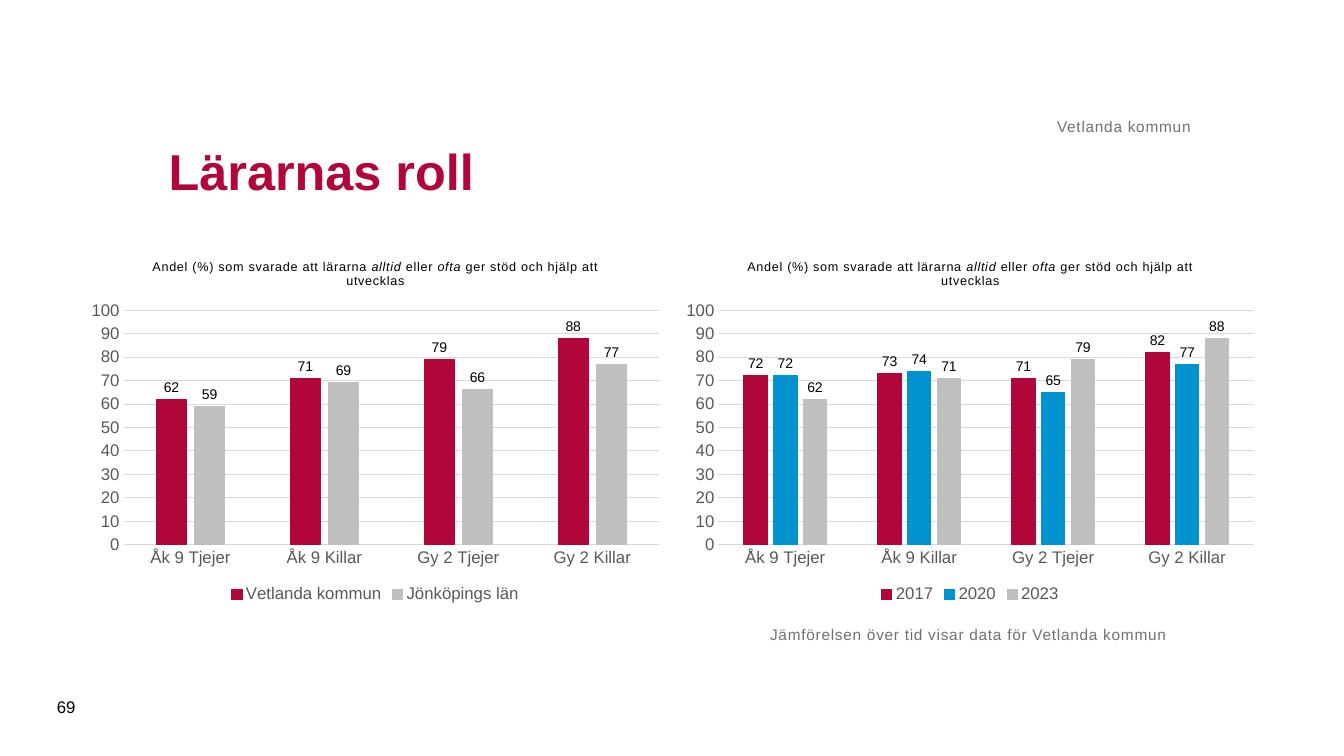
from pptx import Presentation
from pptx.chart.data import CategoryChartData
from pptx.dml.color import RGBColor
from pptx.enum.chart import (XL_CHART_TYPE as ChartType, XL_LABEL_POSITION as LabelPosition,
                             XL_LEGEND_POSITION as LegendPosition, XL_TICK_MARK as TickMark)
from pptx.enum.text import MSO_ANCHOR as Anchor, PP_ALIGN as Align
from pptx.util import Inches, Pt

WIDTH, HEIGHT = Inches(13.33), Inches(7.5)
FONT = "Arial"
NUMBER_FORMAT = "#,##0;#,##0"
COLORS = {"red": "B1063A", "blue": "0093D0", "silver": "BFBFBF", "grid": "D9D9D9",
          "axis": "595959", "note": "717171", "black": "000000"}
GROUPS = ["Åk 9 Tjejer", "Åk 9 Killar", "Gy 2 Tjejer", "Gy 2 Killar"]
QUESTION = [("Andel (%) som svarade att lärarna ", False), ("alltid", True), (" eller ", False),
            ("ofta", True), (" ger stöd och hjälp att utvecklas", False)]
REGION_SERIES = [("Vetlanda kommun", [62, 71, 79, 88], "red"),
                 ("Jönköpings län", [59, 69, 66, 77], "silver")]
YEAR_SERIES = [("2017", [72, 73, 71, 82], "red"), ("2020", [72, 74, 65, 77], "blue"),
               ("2023", [62, 71, 79, 88], "silver")]
CHART_LEFT, CHART_STEP, CHART_TOP = 0.0593, 0.4426, 0.32
CHART_WIDTH, CHART_HEIGHT = 0.44, 0.483


def rgb(name):
    """Return the named palette colour."""
    return RGBColor.from_string(COLORS[name])


def place(left, top, width, height):
    """Turn shares of the slide into a position and size."""
    return (round(left * WIDTH), round(top * HEIGHT), round(width * WIDTH), round(height * HEIGHT))


def style(font, size, color, bold=False, italic=False):
    """Set the typeface, size, colour and emphasis of a font."""
    font.name, font.size, font.bold, font.italic = FONT, Pt(size), bold, italic
    font.color.rgb = rgb(color)


def space_letters(run, points):
    """Widen the letter spacing of a run."""
    run.font._element.set("spc", str(round(points * 100)))


def add_title(slide, text):
    """Fill and format the title placeholder."""
    title = slide.shapes.title
    title.left, title.top, title.width, title.height = place(0.118, 0.131, 0.768, 0.189)
    frame = title.text_frame
    frame.text = text
    frame.vertical_anchor = Anchor.MIDDLE
    frame.paragraphs[0].alignment = Align.LEFT
    style(frame.paragraphs[0].runs[0].font, 36, "red", bold=True)


def add_label(slide, text, area, size, color, anchor=Anchor.TOP, align=Align.LEFT,
              inset=0, spacing=0):
    """Add one line of text."""
    frame = slide.shapes.add_textbox(*place(*area)).text_frame
    frame.word_wrap = True
    frame.vertical_anchor = anchor
    frame.margin_left = frame.margin_right = Inches(inset)
    frame.margin_top = frame.margin_bottom = Inches(inset / 2)
    frame.text = text
    line = frame.paragraphs[0]
    line.alignment = align
    style(line.runs[0].font, size, color)
    space_letters(line.runs[0], spacing)


def format_axes(chart):
    """Format both axes and the gridlines."""
    for axis in (chart.category_axis, chart.value_axis):
        axis.major_tick_mark = axis.minor_tick_mark = TickMark.NONE
        style(axis.tick_labels.font, 12, "axis")
    percent = chart.value_axis
    percent.minimum_scale, percent.maximum_scale, percent.major_unit = 0, 100, 10
    percent.tick_labels.number_format = NUMBER_FORMAT
    percent.tick_labels.number_format_is_linked = False
    percent.format.line.fill.background()
    percent.has_major_gridlines = True
    for line in (percent.major_gridlines.format.line, chart.category_axis.format.line):
        line.color.rgb, line.width = rgb("grid"), Pt(0.75)


def format_columns(series, color):
    """Colour one series and show its values."""
    series.format.fill.solid()
    series.format.fill.fore_color.rgb = rgb(color)
    series.format.line.color.rgb, series.format.line.width = rgb(color), Pt(0.75)
    labels = series.data_labels
    labels.show_value = True
    labels.position = LabelPosition.OUTSIDE_END
    labels.number_format, labels.number_format_is_linked = NUMBER_FORMAT, False
    style(labels.font, 10, "black")


def add_question(chart):
    """Write the survey question as the chart title."""
    chart.has_title = True
    question = chart.chart_title.text_frame.paragraphs[0]
    for text, italic in QUESTION:
        run = question.add_run()
        run.text = text
        style(run.font, 9, "black", italic=italic)
        space_letters(run, 0.5)
    chart.chart_title.include_in_layout = False


def add_columns(slide, column, series_rows):
    """Add a clustered column chart in the given slide column."""
    data = CategoryChartData(number_format=NUMBER_FORMAT)
    data.categories = GROUPS
    for name, values, _ in series_rows:
        data.add_series(name, values)
    area = place(CHART_LEFT + column * CHART_STEP, CHART_TOP, CHART_WIDTH, CHART_HEIGHT)
    chart = slide.shapes.add_chart(ChartType.COLUMN_CLUSTERED, *area, data).chart
    style(chart.font, 10, "black")
    add_question(chart)
    format_axes(chart)
    plot = chart.plots[0]
    plot.gap_width, plot.overlap, plot.vary_by_categories = 219, -27, False
    for series, (_, _, color) in zip(plot.series, series_rows):
        format_columns(series, color)
    chart.has_legend = True
    chart.legend.position = LegendPosition.BOTTOM
    chart.legend.include_in_layout = False
    style(chart.legend.font, 12, "axis")


def main():
    """Build the slide and save it."""
    deck = Presentation()
    deck.slide_width, deck.slide_height = WIDTH, HEIGHT
    slide = deck.slides.add_slide(deck.slide_layouts[5])
    for column, series_rows in enumerate((REGION_SERIES, YEAR_SERIES)):
        add_columns(slide, column, series_rows)
    add_title(slide, "Lärarnas roll")
    add_label(slide, "Jämförelsen över tid visar data för Vetlanda kommun",
              (0.573, 0.827, 0.398, 0.125), 11, "note", spacing=0.5)
    add_label(slide, "Vetlanda kommun", (0.118, 0.083, 0.768, 0.097), 11, "note",
              anchor=Anchor.BOTTOM, align=Align.RIGHT, spacing=0.5)
    add_label(slide, "69", (0.035, 0.908, 0.043, 0.053), 12, "black",
              anchor=Anchor.MIDDLE, inset=0.1)
    deck.save("out.pptx")


if __name__ == "__main__":
    main()
